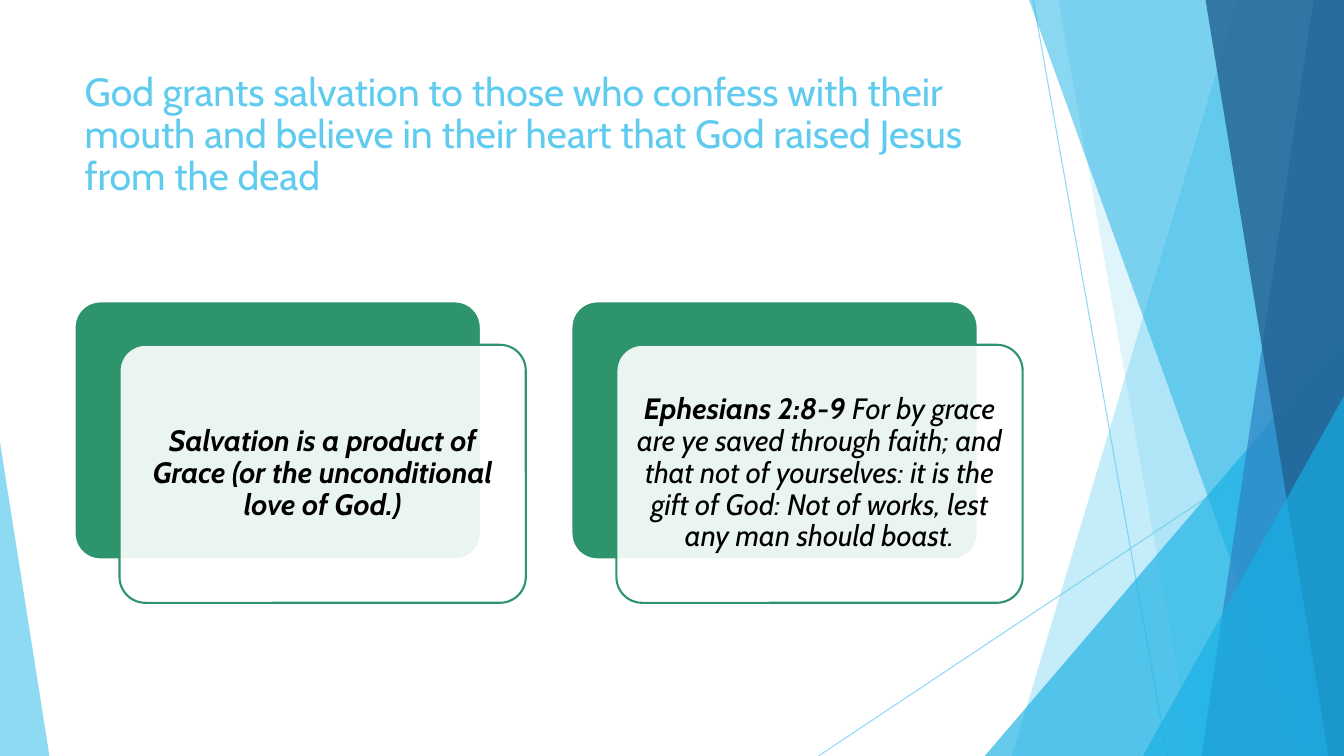
from lxml import etree
from pptx import Presentation
from pptx.dml.color import RGBColor
from pptx.enum.shapes import MSO_CONNECTOR, MSO_SHAPE
from pptx.enum.text import MSO_ANCHOR, PP_ALIGN
from pptx.oxml.ns import qn
from pptx.util import Pt

SKY = RGBColor(0x5F, 0xCB, 0xEF)
CYAN = RGBColor(0x17, 0xB0, 0xE4)
BLUE = RGBColor(0x2E, 0x83, 0xC3)
NAVY = RGBColor(0x22, 0x62, 0x92)
GREEN = RGBColor(0x2E, 0x94, 0x6B)
WHITE = RGBColor(0xFF, 0xFF, 0xFF)
BLACK = RGBColor(0x00, 0x00, 0x00)
FONT = "Cabin"
WIDTH, HEIGHT = 960, 540
CARD_LEFT, CARD_TOP, CARD_WIDTH, CARD_HEIGHT = 53.3, 215.3, 290.2, 184.3
CARD_PITCH, OFFSET_X, OFFSET_Y = 354.9, 32.1, 31


def set_opacity(fill_owner, percent):
    color = fill_owner._element.spPr.find(".//" + qn("a:srgbClr"))
    etree.SubElement(color, qn("a:alpha"), val=str(percent * 1000))


def paint(shape, color, percent, line_color=None):
    shape.shadow.inherit = False
    shape.fill.solid()
    shape.fill.fore_color.rgb = color
    set_opacity(shape, percent)
    if line_color is None:
        shape.line.fill.background()
    else:
        shape.line.color.rgb = line_color
        shape.line.width = Pt(1.5)


deck = Presentation()
deck.slide_width, deck.slide_height = Pt(WIDTH), Pt(HEIGHT)
page = deck.slides.add_slide(deck.slide_layouts[5])

for ends in [(738, 0, 833.8, HEIGHT), (WIDTH, 290.2, 584.6, HEIGHT)]:
    ray = page.shapes.add_connector(MSO_CONNECTOR.STRAIGHT, *map(Pt, ends))
    ray.line.color.rgb = SKY
    ray.line.width = Pt(0.75)
    set_opacity(ray, 70)
    etree.SubElement(ray._element.spPr, qn("a:effectLst"))

facets = [
    ("band", 884.2, 722.9, SKY, 36),
    ("band", 756, 851.8, SKY, 20),
    ("triangle", 703.4, 240, CYAN, 66),
    ("band", 735.1, 929.5, CYAN, 50),
    ("band", 938.2, 858.2, BLUE, 70),
    ("band", 861.1, 949, NAVY, 80),
    ("triangle", 816.5, 283, CYAN, 66),
]
for kind, first, second, color, percent in facets:
    if kind == "band":
        outline = page.shapes.build_freeform(Pt(first), 0)
        corners = [(WIDTH, 0), (WIDTH, HEIGHT), (second, HEIGHT)]
        outline.add_line_segments([(Pt(x), Pt(y)) for x, y in corners])
        facet = outline.convert_to_shape()
    else:
        facet = page.shapes.add_shape(
            MSO_SHAPE.ISOSCELES_TRIANGLE,
            Pt(first), Pt(second), Pt(WIDTH - first), Pt(HEIGHT - second))
        facet.adjustments[0] = 1
    paint(facet, color, percent)

left_facet = page.shapes.add_shape(
    MSO_SHAPE.ISOSCELES_TRIANGLE, 0, Pt(316), Pt(35.3), Pt(HEIGHT - 316))
left_facet.adjustments[0] = 0
paint(left_facet, SKY, 70)

title = page.shapes.title
title.left, title.top, title.width, title.height = Pt(53.3), Pt(48), Pt(676.8), Pt(104)
title.text_frame.word_wrap = True
title.text_frame.vertical_anchor = MSO_ANCHOR.TOP
para = title.text_frame.paragraphs[0]
para.alignment = PP_ALIGN.LEFT
para.line_spacing = 0.9
span = para.add_run()
span.text = ("God grants salvation to those who confess with their mouth "
             "and believe in their heart that God raised Jesus from the dead")
span.font.name = FONT
span.font.size = Pt(28)
span.font.color.rgb = SKY

cards = [
    [("Salvation is a product of Grace (or the unconditional love of God.)", True)],
    [("Ephesians 2:8-9", True),
     (" For by grace are ye saved through faith; and that not of yourselves: "
      "it is the gift of God: Not of works, lest any man should boast.", False)],
]
for index, spans in enumerate(cards):
    left = CARD_LEFT + index * CARD_PITCH
    layers = [(0, 0, GREEN, 100, WHITE), (OFFSET_X, OFFSET_Y, WHITE, 90, GREEN)]
    for shift_x, shift_y, color, percent, line_color in layers:
        card = page.shapes.add_shape(
            MSO_SHAPE.ROUNDED_RECTANGLE, Pt(left + shift_x), Pt(CARD_TOP + shift_y),
            Pt(CARD_WIDTH), Pt(CARD_HEIGHT))
        card.adjustments[0] = 0.1
        paint(card, color, percent, line_color)
    frame = card.text_frame
    frame.word_wrap = True
    frame.vertical_anchor = MSO_ANCHOR.MIDDLE
    frame.margin_left = frame.margin_right = Pt(6.3)
    frame.margin_top = frame.margin_bottom = Pt(6.3)
    para = frame.paragraphs[0]
    para.alignment = PP_ALIGN.CENTER
    para.line_spacing = 0.9
    para.space_after = Pt(7.35)
    for text, bold in spans:
        span = para.add_run()
        span.text = text
        span.font.name = FONT
        span.font.size = Pt(21)
        span.font.bold = bold
        span.font.italic = True
        span.font.color.rgb = BLACK

deck.save("out.pptx")
